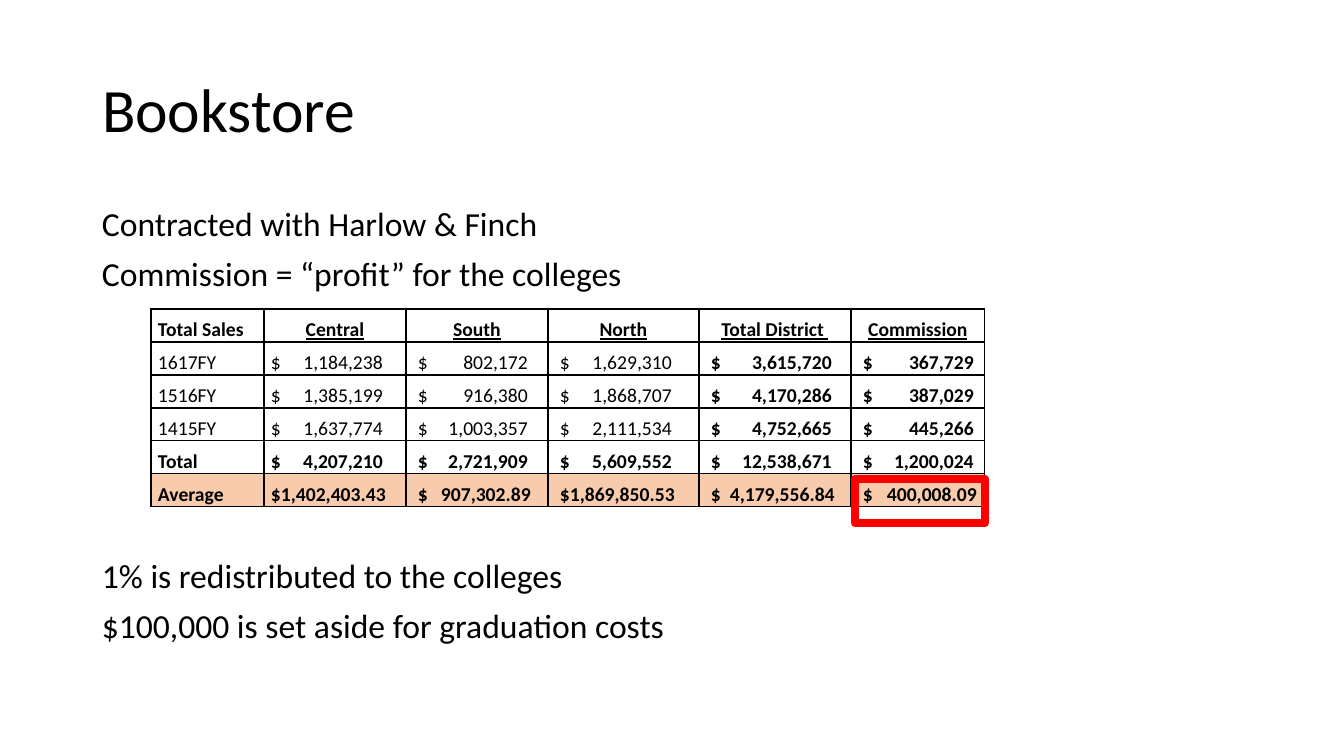
from lxml import etree
from pptx import Presentation
from pptx.dml.color import RGBColor
from pptx.enum.shapes import MSO_SHAPE
from pptx.enum.text import MSO_ANCHOR, PP_ALIGN
from pptx.oxml.ns import qn
from pptx.util import Pt

RECT = MSO_SHAPE.RECTANGLE
MIDDLE, BOTTOM = MSO_ANCHOR.MIDDLE, MSO_ANCHOR.BOTTOM
LEFT, CENTER = PP_ALIGN.LEFT, PP_ALIGN.CENTER

SCALE = 914400 / 100.8
THEME = {
    "font": "Calibri", "ink": "000000", "mark": "FF0000", "peach": "F8CBAD",
    "title": 44, "body": 24, "cell": 14,
}


def px(*vals):
    return [round(val * SCALE) for val in vals]


def style(para, size, bold=False, under=False):
    for run in para.runs:
        font = run.font
        font.name, font.size = THEME["font"], Pt(THEME[size])
        font.bold, font.underline = bold, under
        font.color.rgb = RGBColor.from_string(THEME["ink"])


prs = Presentation()
prs.slide_width, prs.slide_height = px(1344, 756)
slide = prs.slides.add_slide(prs.slide_layouts[5])

title = slide.shapes.title
title.left, title.top, title.width, title.height = px(92, 40, 1159, 146)
frame = title.text_frame
frame.text = "Bookstore"
frame.vertical_anchor = MIDDLE
para = frame.paragraphs[0]
para.alignment, para.line_spacing = LEFT, 0.9
style(para, "title")

points = [
    ("Contracted with Harlow & Finch", 10),
    ("Commission = “profit” for the colleges", 10),
    ("1% is redistributed to the colleges", 190),
    ("$100,000 is set aside for graduation costs", 10),
]
frame = slide.shapes.add_textbox(*px(92, 202, 1159, 480)).text_frame
frame.word_wrap = True
frame.text = "\n".join(text for text, gap in points)
for para, (text, gap) in zip(frame.paragraphs, points):
    para.line_spacing, para.space_before = 0.9, Pt(gap)
    style(para, "body")

sales = [
    ["Total Sales", "Central", "South", "North", "Total District ", "Commission"],
    ["1617FY", "1,184,238", "802,172", "1,629,310", "3,615,720", "367,729"],
    ["1516FY", "1,385,199", "916,380", "1,868,707", "4,170,286", "387,029"],
    ["1415FY", "1,637,774", "1,003,357", "2,111,534", "4,752,665", "445,266"],
    ["Total", "4,207,210", "2,721,909", "5,609,552", "12,538,671", "1,200,024"],
    ["Average", "1,402,403.43", "907,302.89", "1,869,850.53", "4,179,556.84", "400,008.09"],
]
widths = [113, 142, 142, 151, 152, 134]
stops = [0, 112, 110, 112, 121, 111]
tight = [1, 3]
last = len(sales) - 1
table = slide.shapes.add_table(
    len(sales), len(widths), *px(151, 309, sum(widths), 33 * len(sales))
).table
table.first_row = table.horz_banding = False
for col, width in zip(table.columns, px(*widths)):
    col.width = width

for r, row in enumerate(sales):
    table.rows[r].height = px(33)[0]
    for c, value in enumerate(row):
        cell = table.cell(r, c)
        money = r > 0 and c > 0
        cell.margin_left, cell.margin_right = px(12 if money and c > 1 else 7, 7)
        cell.margin_top = cell.margin_bottom = 0
        cell.vertical_anchor = BOTTOM
        para = cell.text_frame.paragraphs[0]
        if not money:
            para.text = value
        elif r == last and c in tight:
            para.text = "$" + value
        else:
            para.text = "$\t" + value
            tabs = etree.SubElement(para._p.get_or_add_pPr(), qn("a:tabLst"))
            stop = px(stops[c] + (3 if r == last else 0))[0]
            etree.SubElement(tabs, qn("a:tab"), pos=str(stop), algn="r")
        para.alignment = CENTER if r == 0 and c > 0 else LEFT
        style(para, "cell", r in (0, 4, 5) or c > 3, r == 0 and c > 0)
        props = cell._tc.get_or_add_tcPr()
        for side in ("lnL", "lnR", "lnT", "lnB"):
            line = etree.SubElement(props, qn("a:" + side), w=str(Pt(1)))
            fill = etree.SubElement(line, qn("a:solidFill"))
            etree.SubElement(fill, qn("a:srgbClr"), val=THEME["ink"])
        if r == last:
            cell.fill.solid()
            cell.fill.fore_color.rgb = RGBColor.from_string(THEME["peach"])
        else:
            cell.fill.background()

box = slide.shapes.add_shape(RECT, *px(855, 479, 130, 44))
box.shadow.inherit = False
box.fill.background()
box.line.color.rgb = RGBColor.from_string(THEME["mark"])
box.line.width = Pt(6)

prs.save("out.pptx")
